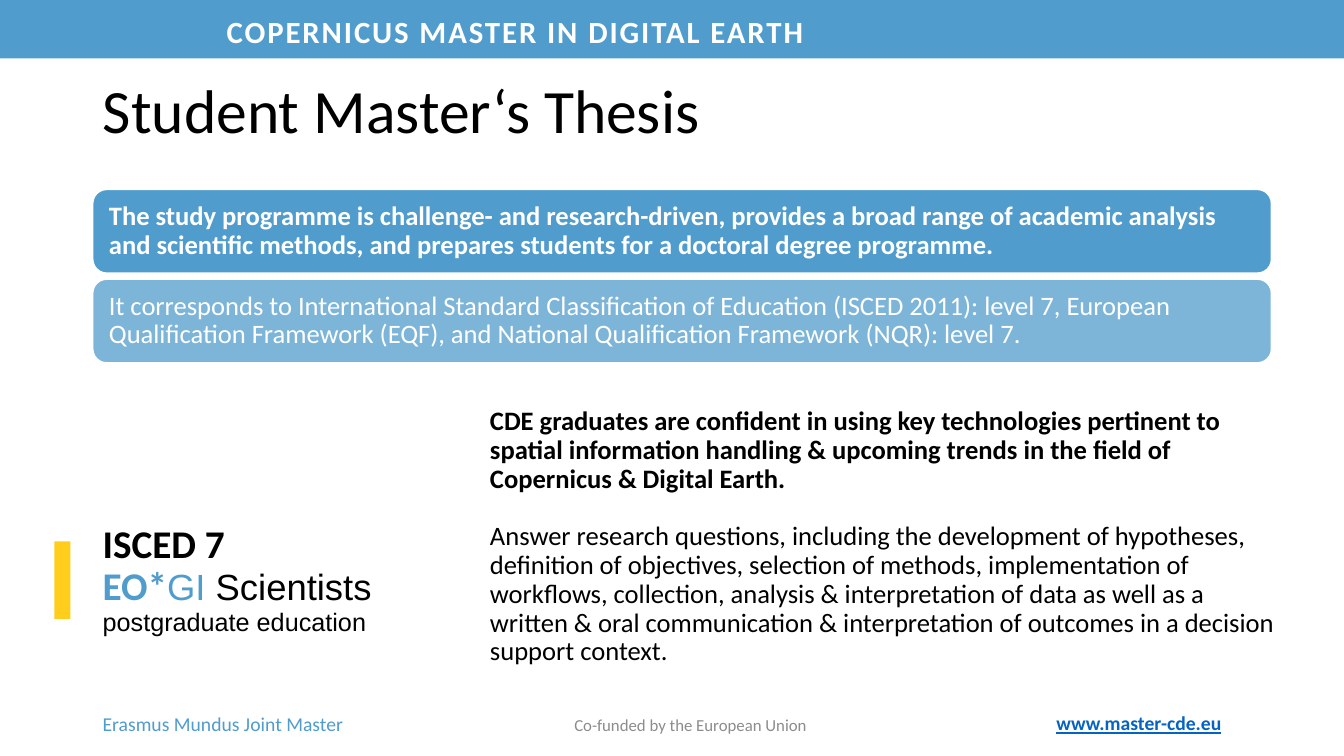
from dataclasses import dataclass

from lxml import etree
from pptx import Presentation
from pptx.dml.color import RGBColor
from pptx.enum.shapes import MSO_SHAPE
from pptx.enum.text import MSO_ANCHOR, MSO_AUTO_SIZE, PP_ALIGN
from pptx.oxml.ns import qn
from pptx.util import Inches, Pt

RECT, ROUND = MSO_SHAPE.RECTANGLE, MSO_SHAPE.ROUNDED_RECTANGLE
TOP, MIDDLE = MSO_ANCHOR.TOP, MSO_ANCHOR.MIDDLE
LEFT, CENTER = PP_ALIGN.LEFT, PP_ALIGN.CENTER
FIXED = MSO_AUTO_SIZE.NONE


@dataclass(frozen=True)
class Theme:
    blue: str = "509CCD"
    gold: str = "FFCD1C"
    link: str = "0563C1"
    gray: str = "8C8C8C"
    white: str = "FFFFFF"
    black: str = "000000"
    main: str = "Calibri"
    plain: str = "Arial"
    title: int = 44
    large: int = 28
    medium: int = 26
    banner: int = 22
    body: int = 19
    small: int = 18
    footer: int = 14
    note: int = 12


class Page:
    def __init__(self, slide, theme):
        self.slide, self.theme = slide, theme

    def place(self, shape, box):
        for name, value in zip(("left", "top", "width", "height"), box):
            setattr(shape, name, Inches(value))

    def add_run(self, para, text, size, color=None, face=None, track=0, **form):
        run = para.add_run()
        run.text = text
        form = {"size": Pt(size), "name": face or self.theme.main, **form}
        for name, value in form.items():
            setattr(run.font, name, value)
        run.font.color.rgb = RGBColor.from_string(color or self.theme.black)
        if track:
            run.font._element.set("spc", str(track))

    def fill_text(self, shape, lines, anchor=MIDDLE, align=LEFT, lead=1.0, inset=None):
        """Fill one paragraph; each line is a list of (text, format) pairs."""
        frame = shape.text_frame
        form = {"word_wrap": True, "auto_size": FIXED, "vertical_anchor": anchor}
        if inset is not None:
            form.update(margin_left=Inches(inset), margin_right=Inches(inset))
        for name, value in form.items():
            setattr(frame, name, value)
        para = frame.paragraphs[0]
        para.alignment, para.line_spacing = align, lead
        for row, line in enumerate(lines):
            if row:
                para.add_line_break()
            for text, style in line:
                self.add_run(para, text, **style)

    def label(self, box, lines, **form):
        self.fill_text(self.slide.shapes.add_textbox(*map(Inches, box)), lines, **form)

    def block(self, kind, box, color, alpha=None):
        shape = self.slide.shapes.add_shape(kind, *map(Inches, box))
        shape.shadow.inherit = False
        shape.fill.solid()
        shape.fill.fore_color.rgb = RGBColor.from_string(color)
        shape.line.fill.background()
        if alpha:
            tone = shape._element.spPr.find(".//" + qn("a:srgbClr"))
            etree.SubElement(tone, qn("a:alpha")).set("val", str(alpha * 1000))
        return shape

    def card(self, box, text, alpha=None, bold=False):
        shape = self.block(ROUND, box, self.theme.blue, alpha)
        shape.line.color.rgb = RGBColor.from_string(self.theme.white)
        shape.line.width = Pt(1)
        style = {"size": self.theme.body, "color": self.theme.white, "bold": bold}
        self.fill_text(shape, [[(text, style)]], lead=0.9, inset=0.12)

    def title(self, box, text):
        shape = self.slide.shapes.title
        self.place(shape, box)
        self.fill_text(shape, [[(text, {"size": self.theme.title})]], lead=0.9)

    def body(self, box, items, gap):
        """Fill the body placeholder with unbulleted (text, bold) items."""
        shape = self.slide.placeholders[1]
        self.place(shape, box)
        frame = shape.text_frame
        frame.vertical_anchor, frame.auto_size = MIDDLE, FIXED
        for row, (text, bold) in enumerate(items):
            para = frame.add_paragraph() if row else frame.paragraphs[0]
            props = para._p.get_or_add_pPr()
            for name in ("marL", "indent"):
                props.set(name, "0")
            etree.SubElement(props, qn("a:buNone"))
            para.line_spacing = 0.9
            para.space_before = Pt(gap if row else 0)
            self.add_run(para, text, self.theme.body, bold=bold)


def main():
    deck = Presentation()
    deck.slide_width, deck.slide_height = Inches(13.33), Inches(7.5)
    look = Theme()
    page = Page(deck.slides.add_slide(deck.slide_layouts[1]), look)

    page.block(RECT, (0, 0, 13.33, 0.58), look.blue)
    banner = {"size": look.banner, "color": look.white, "bold": True, "track": 140}
    page.label((2.15, 0.06, 8.2, 0.5),
               [[("COPERNICUS MASTER IN DIGITAL EARTH", banner)]])
    page.title((0.92, 0.4, 11.5, 1.45), "Student Master‘s Thesis")

    cards = [
        ("The study programme is challenge- and research-driven, provides a broad "
         "range of academic analysis and scientific methods, and prepares students "
         "for a doctoral degree programme.", None, True),
        ("It corresponds to International Standard Classification of Education "
         "(ISCED 2011): level 7, European Qualification Framework (EQF), and "
         "National Qualification Framework (NQR): level 7.", 74, False),
    ]
    for row, (text, alpha, bold) in enumerate(cards):
        page.card((0.92, 1.88 + 0.89 * row, 11.69, 0.83), text, alpha, bold)

    page.block(RECT, (0.54, 5.37, 0.16, 0.77), look.gold)
    strong = {"size": look.large, "bold": True}
    plain = {"size": look.medium, "face": look.plain}
    page.label((0.92, 4.86, 3.38, 1.8), [
        [("ISCED 7", strong)],
        [("EO*", {**strong, "color": look.blue}),
         ("GI ", {**plain, "color": look.blue}), ("Scientists", plain)],
        [("postgraduate education", {**plain, "size": look.small})],
    ], lead=0.9)

    page.body((4.76, 3.87, 8.02, 2.92), [
        ("CDE graduates are confident in using key technologies pertinent to "
         "spatial information handling & upcoming trends in the field of "
         "Copernicus & Digital Earth.", True),
        ("Answer research questions, including the development of hypotheses, "
         "definition of objectives, selection of methods, implementation of "
         "workflows, collection, analysis & interpretation of data as well as a "
         "written & oral communication & interpretation of outcomes in a decision "
         "support context.", False),
    ], gap=20.5)

    foot = {"size": look.footer}
    page.label((0.92, 7.01, 4.14, 0.34),
               [[("Erasmus Mundus Joint Master", {**foot, "color": look.blue})]],
               anchor=TOP)
    page.label((4.6, 6.99, 4.5, 0.4),
               [[("Co-funded by the European Union",
                  {"size": look.note, "color": look.gray})]], align=CENTER)
    site = {**foot, "color": look.link, "bold": True, "underline": True}
    page.label((10.38, 6.99, 2.06, 0.36), [[("www.master-cde.eu", site)]])

    deck.save("out.pptx")


if __name__ == "__main__":
    main()
